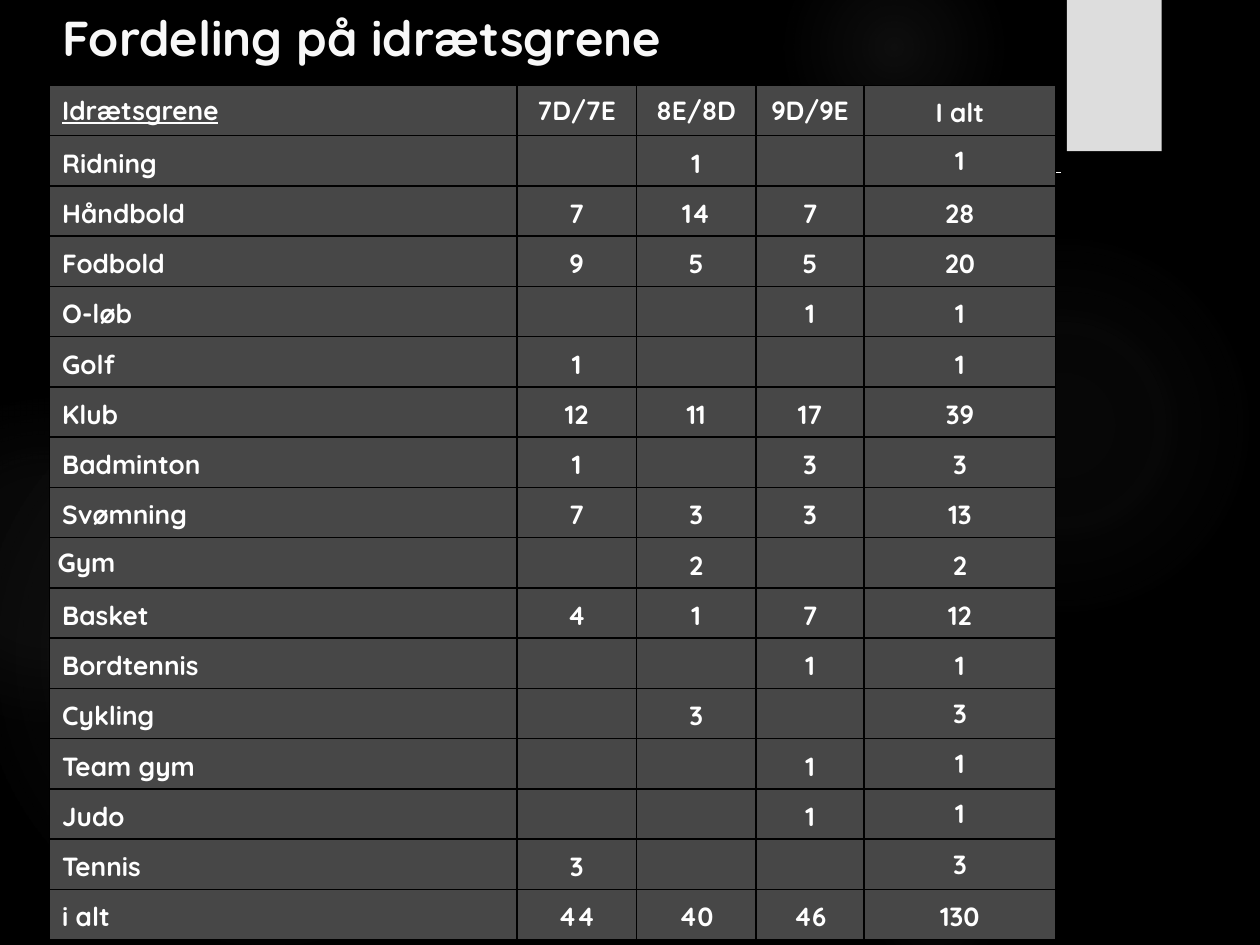
from lxml import etree
from pptx import Presentation
from pptx.dml.color import RGBColor
from pptx.enum import shapes, text
from pptx.oxml import ns, parse_xml
from pptx.util import Cm, Pt

BLACK = RGBColor(0x00, 0x00, 0x00)
WHITE = RGBColor(0xFF, 0xFF, 0xFF)
TITLE_WHITE = RGBColor(0xF8, 0xF8, 0xF8)
CELL_GREY = RGBColor(0x47, 0x47, 0x47)
TAB_GREY = RGBColor(0xDD, 0xDD, 0xDD)
GLOW_GREY = RGBColor(0x66, 0x66, 0x66)
FONT = "Quicksand"

# Left, top, diameter in cm, then (position, opacity) stops in percent
GLOWS = [
    (17.5, 4.66, 7.82, [(0, 7), (36, 6), (69, 0)]),
    (15.8, -1.27, 4.45, [(0, 14), (36, 7), (73, 0)]),
    (17.5, 16.95, 2.75, [(0, 9), (36, 5), (66, 0)]),
    (-0.42, 7.41, 11.64, [(0, 11), (36, 10), (75, 0)]),
    (-2.33, 8.04, 6.56, [(0, 8), (36, 8), (72, 0)]),
]

COLUMN_WIDTHS = [9.42, 2.41, 2.41, 2.18, 3.86]
ROW_HEIGHT = 1.01
ROWS = [
    ["Idrætsgrene", "7D/7E", "8E/8D", "9D/9E", "I alt"],
    ["Ridning", "", "1", "", "1"],
    ["Håndbold", "7", "14", "7", "28"],
    ["Fodbold", "9", "5", "5", "20"],
    ["O-løb", "", "", "1", "1"],
    ["Golf", "1", "", "", "1"],
    ["Klub", "12", "11", "17", "39"],
    ["Badminton", "1", "", "3", "3"],
    ["Svømning", "7", "3", "3", "13"],
    ["Gym", "", "2", "", "2"],
    ["Basket", "4", "1", "7", "12"],
    ["Bordtennis", "", "", "1", "1"],
    ["Cykling", "", "3", "", "3"],
    ["Team gym", "", "", "1", "1"],
    ["Judo", "", "", "1", "1"],
    ["Tennis", "3", "", "", "3"],
    ["i alt", "44", "40", "46", "130"],
]
GYM_ROW = 9
# Cells set with single line spacing; all others use 1.15
SINGLE_SPACED = ({(0, column) for column in range(4)} | {(GYM_ROW, 0)}
                 | {(row, 4) for row in (1, 12, 13, 14, 15)})


def add_glow(slide, left, top, diameter, stops):
    shape = slide.shapes.add_shape(shapes.MSO_SHAPE.OVAL, Cm(left), Cm(top),
                                   Cm(diameter), Cm(diameter))
    shape.shadow.inherit = False
    shape.line.fill.background()
    # Radial gradient fading to transparent
    stop_xml = "".join(
        f'<a:gs pos="{position * 1000}"><a:srgbClr val="{GLOW_GREY}">'
        f'<a:alpha val="{opacity * 1000}"/></a:srgbClr></a:gs>'
        for position, opacity in stops)
    gradient = parse_xml(
        f'<a:gradFill {ns.nsdecls("a")} rotWithShape="1"><a:gsLst>{stop_xml}</a:gsLst>'
        '<a:path path="circle"><a:fillToRect l="50000" t="50000" r="50000" b="50000"/>'
        '</a:path></a:gradFill>')
    shape._element.spPr.find(ns.qn("a:prstGeom")).addnext(gradient)


def add_backdrop(slide):
    slide.background.fill.solid()
    slide.background.fill.fore_color.rgb = BLACK
    for glow in GLOWS:
        add_glow(slide, *glow)

    # Grey tab at the top right
    tab = slide.shapes.add_shape(shapes.MSO_SHAPE.RECTANGLE,
                                 Cm(21.51), Cm(0), Cm(1.91), Cm(3.05))
    tab.shadow.inherit = False
    tab.fill.solid()
    tab.fill.fore_color.rgb = TAB_GREY
    tab.line.fill.background()

    # Rule running behind the table
    rule = slide.shapes.add_connector(shapes.MSO_CONNECTOR.STRAIGHT,
                                      Cm(1.48), Cm(3.48), Cm(21.38), Cm(3.48))
    rule.line.color.rgb = WHITE
    rule.line.width = Pt(0.75)
    etree.SubElement(rule._element.spPr, ns.qn("a:effectLst"))


def format_title(slide, left, top, width, height):
    title = slide.shapes.title
    title.left, title.top, title.width, title.height = map(Cm, (left, top, width, height))
    slide.shapes._spTree.append(title._element)  # in front of the backdrop
    frame = title.text_frame
    frame.text = "Fordeling på idrætsgrene"
    frame.auto_size = text.MSO_AUTO_SIZE.NONE
    frame.vertical_anchor = text.MSO_ANCHOR.MIDDLE
    paragraph = frame.paragraphs[0]
    paragraph.alignment = text.PP_ALIGN.LEFT
    format_font(paragraph.font, 28, TITLE_WHITE)


def format_font(font, size, color):
    font.name = FONT
    font.size = Pt(size)
    font.bold = True
    font.color.rgb = color


def add_borders(cell):
    properties = cell._tc.get_or_add_tcPr()
    for index, side in enumerate(("lnL", "lnR", "lnT", "lnB")):
        properties.insert(index, parse_xml(
            f'<a:{side} {ns.nsdecls("a")} w="{Pt(1)}"><a:solidFill>'
            f'<a:srgbClr val="{BLACK}"/></a:solidFill></a:{side}>'))


def add_sports_table(slide, left, top):
    table = slide.shapes.add_table(
        len(ROWS), len(COLUMN_WIDTHS), Cm(left), Cm(top),
        Cm(sum(COLUMN_WIDTHS)), Cm(ROW_HEIGHT * len(ROWS))).table
    table.first_row = table.horz_banding = False
    for column, width in zip(table.columns, COLUMN_WIDTHS):
        column.width = Cm(width)

    for row_index, values in enumerate(ROWS):
        table.rows[row_index].height = Cm(ROW_HEIGHT)
        for column_index, value in enumerate(values):
            cell = table.cell(row_index, column_index)
            cell.text = value
            cell.vertical_anchor = text.MSO_ANCHOR.MIDDLE
            cell.fill.solid()
            cell.fill.fore_color.rgb = CELL_GREY
            add_borders(cell)
            paragraph = cell.text_frame.paragraphs[0]
            if column_index:
                paragraph.alignment = text.PP_ALIGN.CENTER
            if value and (row_index, column_index) not in SINGLE_SPACED:
                paragraph.line_spacing = 1.15
            format_font(paragraph.font, 15, WHITE)

    table.cell(0, 0).text_frame.paragraphs[0].font.underline = True
    gym = table.cell(GYM_ROW, 0)
    gym.margin_left = Cm(0.16)
    gym.margin_top = gym.margin_bottom = Cm(0.02)


def main():
    presentation = Presentation()
    presentation.slide_width, presentation.slide_height = Cm(25.4), Cm(19.05)
    slide = presentation.slides.add_slide(presentation.slide_layouts[5])
    add_backdrop(slide)
    format_title(slide, 1, 0, 21.59, 1.5)
    add_sports_table(slide, 1, 1.72)
    presentation.save("out.pptx")


if __name__ == "__main__":
    main()
